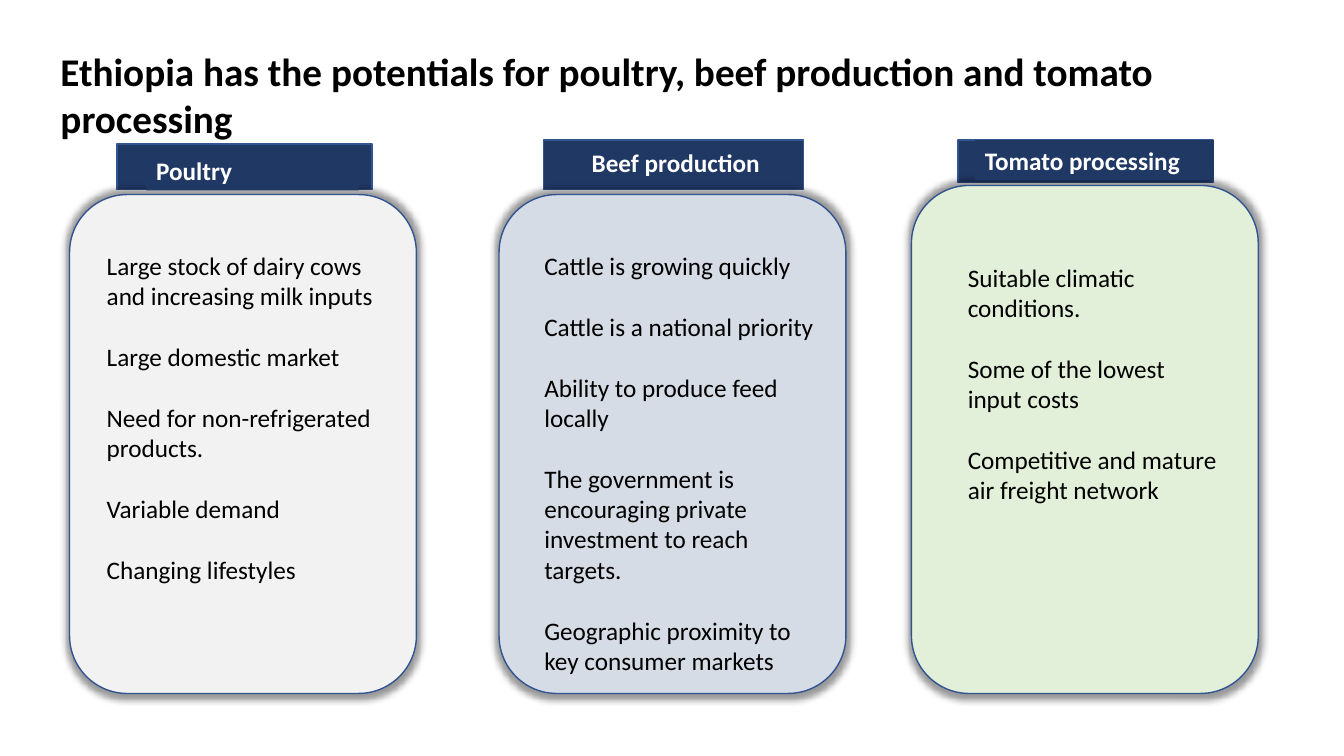
from dataclasses import dataclass

from lxml import etree
from pptx import Presentation
from pptx.dml.color import RGBColor
from pptx.enum.shapes import MSO_SHAPE as Kind
from pptx.enum.text import MSO_ANCHOR as Anchor, MSO_AUTO_SIZE as Fit, PP_ALIGN as Align
from pptx.oxml import parse_xml
from pptx.oxml.ns import nsdecls
from pptx.util import Pt

PX = 9144  # EMU per px, 100 px to the inch

BLACK = RGBColor(0x00, 0x00, 0x00)
WHITE = RGBColor(0xFF, 0xFF, 0xFF)
NAVY = RGBColor(0x20, 0x38, 0x64)
BLUE = RGBColor(0x32, 0x54, 0x91)
GREY = RGBColor(0xF2, 0xF2, 0xF2)
STEEL = RGBColor(0xD6, 0xDC, 0xE5)
GREEN = RGBColor(0xE2, 0xF0, 0xD9)

BODY = {"name": "Calibri", "size": Pt(18), "bold": False}
HEAD = {"name": "Calibri", "size": Pt(18), "bold": True}
TITLE = {"name": "Calibri", "size": Pt(28), "bold": True}
FRAME = {"word_wrap": True, "auto_size": Fit.NONE, "vertical_anchor": Anchor.TOP}
GAP = Pt(22)  # one body line between points

GLOW = (
    f'<a:effectLst {nsdecls("a")}><a:outerShdw blurRad="63500" sx="102000" '
    'sy="102000" algn="ctr" rotWithShape="0"><a:srgbClr val="000000">'
    '<a:alpha val="40000"/></a:srgbClr></a:outerShdw></a:effectLst>'
)


@dataclass(frozen=True)
class Box:
    left: int
    top: int
    width: int
    height: int


@dataclass(frozen=True)
class Column:
    head: str
    fill: RGBColor
    card: Box
    bar: Box
    label: Box
    body: Box
    points: tuple[str, ...]


COLUMNS = (
    Column(
        "Poultry", GREY,
        Box(69, 193, 344, 495), Box(116, 143, 253, 45),
        Box(145, 149, 211, 40), Box(96, 243, 299, 343),
        ("Large stock of dairy cows and increasing milk inputs",
         "Large domestic market",
         "Need for non-refrigerated products.",
         "Variable demand",
         "Changing lifestyles"),
    ),
    Column(
        "Beef production", STEEL,
        Box(495, 193, 344, 495), Box(539, 139, 258, 49),
        Box(577, 141, 211, 40), Box(530, 243, 299, 434),
        ("Cattle is growing quickly",
         "Cattle is a national priority",
         "Ability to produce feed locally",
         "The government is encouraging private investment to reach targets.",
         "Geographic proximity to key consumer markets"),
    ),
    Column(
        "Tomato processing", GREEN,
        Box(904, 184, 344, 504), Box(950, 139, 253, 42),
        Box(967, 139, 237, 40), Box(950, 255, 268, 252),
        ("Suitable climatic conditions.",
         "Some of the lowest input costs",
         "Competitive and mature air freight network"),
    ),
)


def scale(box: Box) -> tuple[int, ...]:
    return tuple(n * PX for n in (box.left, box.top, box.width, box.height))


def style(item, looks: dict) -> None:
    for key, value in looks.items():
        setattr(item, key, value)


def write(frame, lines: tuple[str, ...], looks: dict, color: RGBColor) -> None:
    style(frame, FRAME)
    for i, line in enumerate(lines):
        para = frame.paragraphs[0] if i == 0 else frame.add_paragraph()
        style(para, {"alignment": Align.LEFT, "space_after": GAP})
        run = para.add_run()
        run.text = line
        style(run.font, looks)
        run.font.color.rgb = color


def panel(slide, kind: Kind, box: Box, fill: RGBColor):
    shape = slide.shapes.add_shape(kind, *scale(box))
    shape.shadow.inherit = False
    shape.fill.solid()
    shape.fill.fore_color.rgb = fill
    shape.line.color.rgb = BLUE
    shape.line.width = Pt(1)
    return shape


def glow(shape) -> None:
    props = shape.element.spPr
    plain = props.find("{*}effectLst")
    props.replace(plain, parse_xml(GLOW))


def draw(slide, col: Column) -> None:
    # Header bar, then the card over its lower edge
    panel(slide, Kind.RECTANGLE, col.bar, NAVY)
    glow(panel(slide, Kind.ROUNDED_RECTANGLE, col.card, col.fill))

    # Header text
    label = slide.shapes.add_textbox(*scale(col.label))
    label.fill.solid()
    label.fill.fore_color.rgb = NAVY
    write(label.text_frame, (col.head,), HEAD, WHITE)

    # Points
    body = slide.shapes.add_textbox(*scale(col.body))
    write(body.text_frame, col.points, BODY, BLACK)


def main() -> None:
    deck = Presentation()
    style(deck, {"slide_width": 1333 * PX, "slide_height": 750 * PX})
    slide = deck.slides.add_slide(deck.slide_layouts[5])

    # Title
    title = slide.shapes.title
    spot = scale(Box(50, 42, 1153, 104))
    style(title, dict(zip(("left", "top", "width", "height"), spot)))
    text = "Ethiopia has the potentials for poultry, beef production and tomato processing"
    write(title.text_frame, (text,), TITLE, BLACK)

    # Columns
    for col in COLUMNS:
        draw(slide, col)

    deck.save("out.pptx")


if __name__ == "__main__":
    main()
